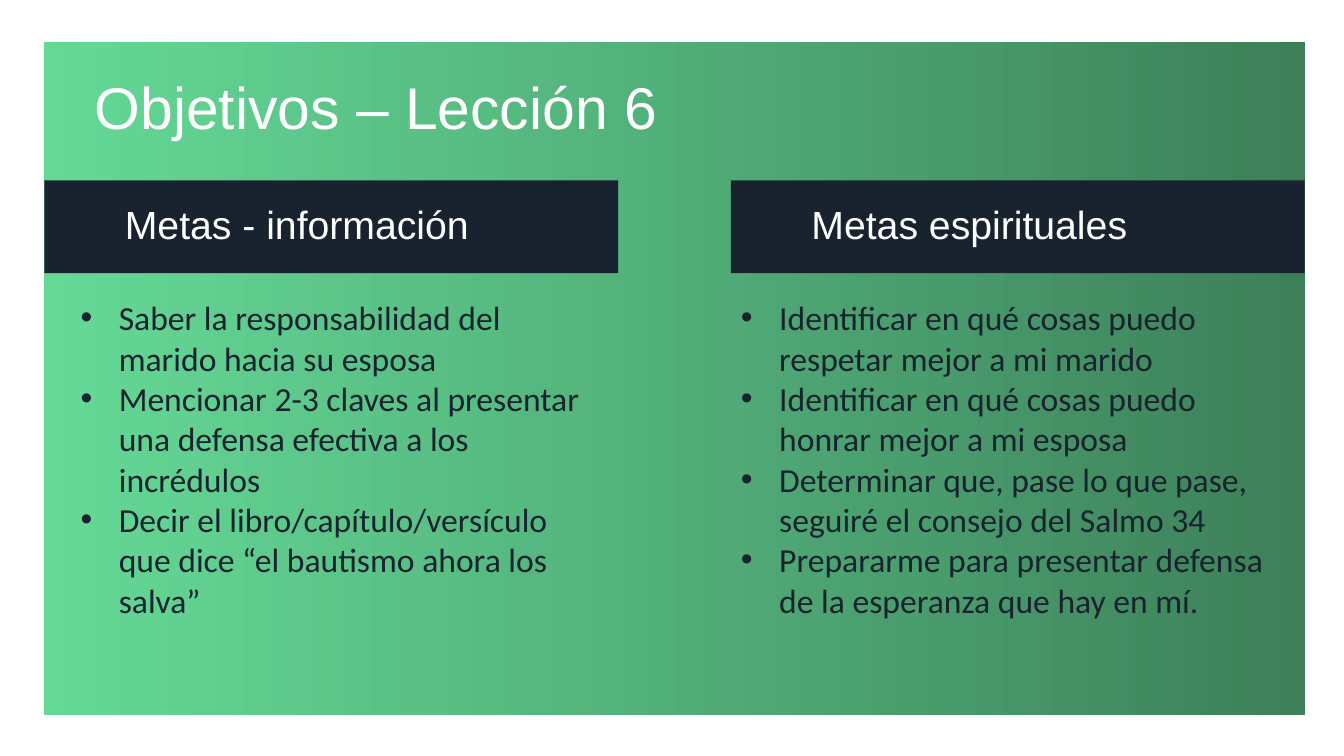
from dataclasses import dataclass

from lxml.etree import SubElement
from pptx import Presentation
from pptx.dml.color import RGBColor
from pptx.enum.shapes import MSO_SHAPE
from pptx.enum.text import MSO_ANCHOR, PP_ALIGN
from pptx.oxml.ns import qn
from pptx.util import Inches, Pt


@dataclass(frozen=True)
class Theme:
    white: RGBColor = RGBColor.from_string("FFFFFF")
    navy: RGBColor = RGBColor.from_string("19232F")
    light_green: RGBColor = RGBColor.from_string("2CCB70")
    dark_green: RGBColor = RGBColor.from_string("166638")
    heading_font: str = "Arial"
    body_font: str = "Calibri"
    title_size: int = 42
    heading_size: int = 28
    body_size: int = 24


theme = Theme()


def add_line(para, text, font, size, color, indent, bullet=False):
    """Fill a paragraph with one run, indented and optionally bulleted."""
    properties = para._p.get_or_add_pPr()
    properties.set("marL", str(Inches(indent)))
    properties.set("indent", str(-Inches(indent) if bullet else 0))
    if bullet:
        SubElement(properties, qn("a:buFont"), typeface="Arial")
        SubElement(properties, qn("a:buChar"), char="•")
    else:
        para.line_spacing = 0.9
    para.alignment = PP_ALIGN.LEFT
    span = para.add_run()
    span.text = text
    span.font.name = font
    span.font.size = Pt(size)
    span.font.color.rgb = color


def add_panel(left, top, width, height):
    """Add a rectangle without outline or shadow."""
    panel = page.shapes.add_shape(
        MSO_SHAPE.RECTANGLE, Inches(left), Inches(top), Inches(width), Inches(height))
    panel.shadow.inherit = False
    panel.line.fill.background()
    return panel


deck = Presentation()
deck.slide_width, deck.slide_height = Inches(13.33), Inches(7.5)
page = deck.slides.add_slide(deck.slide_layouts[6])

# Translucent green gradient panel
backdrop = add_panel(0.44, 0.42, 12.5, 6.67)
backdrop.fill.gradient()
backdrop.fill.gradient_angle = 0
for stop, color in zip(backdrop.fill.gradient_stops, (theme.light_green, theme.dark_green)):
    stop.color.rgb = color
stop_colors = backdrop._element.spPr.iter(qn("a:srgbClr"))
for stop_color, opacity in zip(stop_colors, (73, 83)):
    SubElement(stop_color, qn("a:alpha"), val=str(opacity * 1000))

# Title
title = page.shapes.add_textbox(Inches(0.59), Inches(0.78), Inches(10.62), Inches(0.64))
title.text_frame.word_wrap = True
title.text_frame.vertical_anchor = MSO_ANCHOR.MIDDLE
add_line(title.text_frame.paragraphs[0], "Objetivos – Lección 6",
         theme.heading_font, theme.title_size, theme.white, 0.25)

# Two columns: heading left, list left, heading, goals
columns = [
    (0.44, 0.7, "Metas - información", [
        "Saber la responsabilidad del marido hacia su esposa",
        "Mencionar 2-3 claves al presentar una defensa efectiva a los incrédulos",
        "Decir el libro/capítulo/versículo que dice “el bautismo ahora los salva”",
    ]),
    (7.25, 7.25, "Metas espirituales", [
        "Identificar en qué cosas puedo respetar mejor a mi marido",
        "Identificar en qué cosas puedo honrar mejor a mi esposa",
        "Determinar que, pase lo que pase, seguiré el consejo del Salmo 34",
        "Prepararme para presentar defensa de la esperanza que hay en mí.",
    ]),
]
for heading_left, list_left, heading, goals in columns:
    # Heading bar
    bar = add_panel(heading_left, 1.79, 5.69, 0.92)
    bar.fill.solid()
    bar.fill.fore_color.rgb = theme.navy
    bar.text_frame.word_wrap = True
    bar.text_frame.vertical_anchor = MSO_ANCHOR.MIDDLE
    add_line(bar.text_frame.paragraphs[0], heading,
             theme.heading_font, theme.heading_size, theme.white, 0.7)

    # Bulleted goals
    box = page.shapes.add_textbox(Inches(list_left), Inches(2.9), Inches(5.38), Inches(4.04))
    frame = box.text_frame
    frame.word_wrap = True
    for number, goal in enumerate(goals):
        para = frame.add_paragraph() if number else frame.paragraphs[0]
        add_line(para, goal, theme.body_font, theme.body_size, theme.navy, 0.38, bullet=True)

deck.save("out.pptx")
